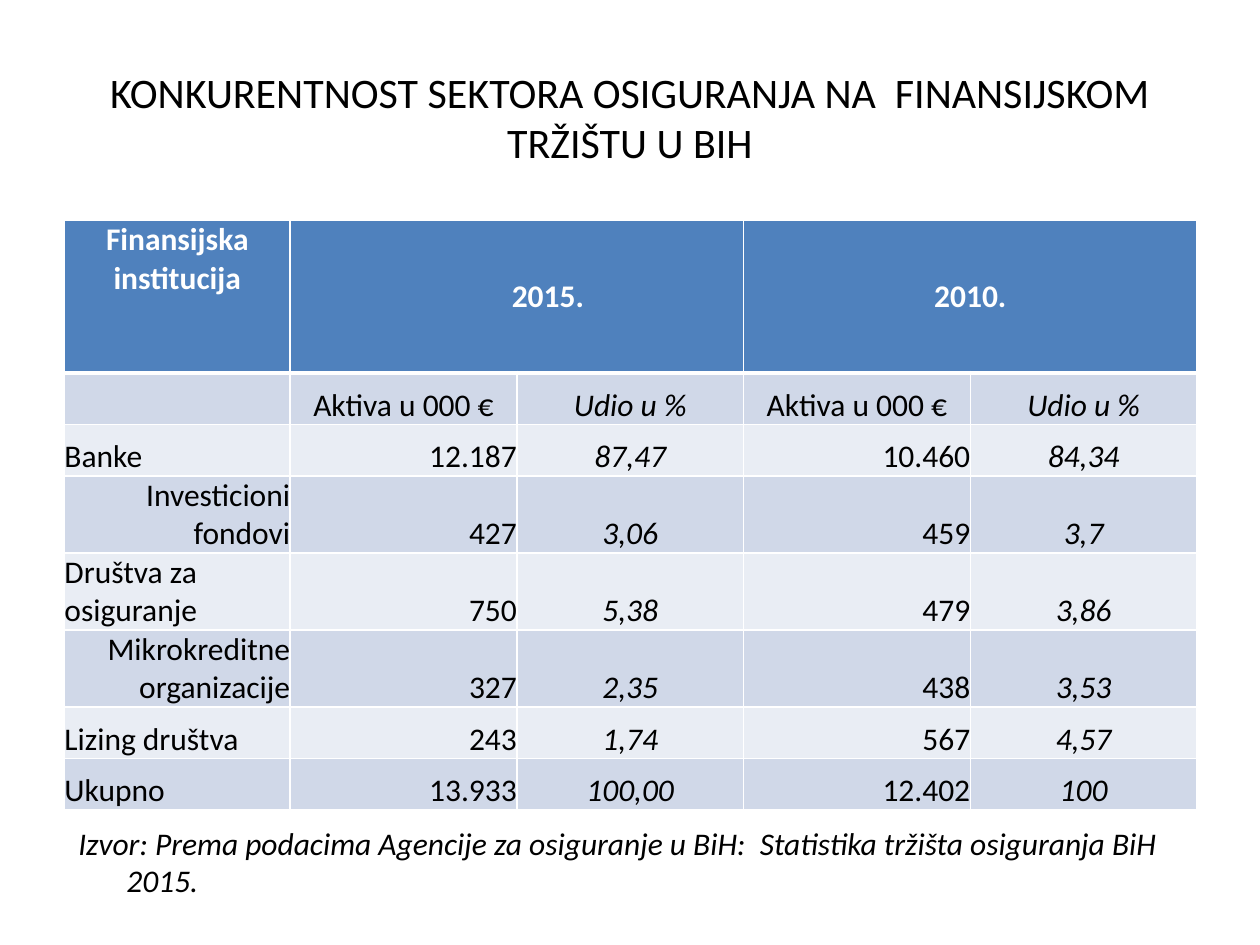
from dataclasses import dataclass

from lxml.etree import SubElement
from pptx import Presentation
from pptx.dml.color import RGBColor
from pptx.enum.text import MSO_ANCHOR as Anchor, PP_ALIGN as Align
from pptx.oxml.ns import qn
from pptx.util import Cm, Pt

COLORS = {
    "header": "4F81BD",
    "band_dark": "D0D8E8",
    "band_light": "E9EDF4",
    "white": "FFFFFF",
    "black": "000000",
}
FONT = "Calibri"
HEADER_HEIGHT, SINGLE_HEIGHT, DOUBLE_HEIGHT = 3.07, 1.04, 1.55
COLUMN_WIDTHS = (4.55, 4.57, 4.57, 4.57, 4.57)


@dataclass(frozen=True)
class Institution:
    name: str
    figures: tuple
    name_align: Align = Align.LEFT
    height: float = SINGLE_HEIGHT


@dataclass(frozen=True)
class CellStyle:
    fill: str
    align: Align
    color: str = "black"
    anchor: Anchor = Anchor.BOTTOM
    bold: bool = False
    italic: bool = False
    left_margin: float = 0
    bottom_border: float = 1


INSTITUTIONS = (
    Institution("Banke", ("12.187", "87,47", "10.460", "84,34")),
    Institution("Investicioni fondovi", ("427", "3,06", "459", "3,7"), Align.RIGHT, DOUBLE_HEIGHT),
    Institution("Društva za osiguranje", ("750", "5,38", "479", "3,86"), Align.LEFT, DOUBLE_HEIGHT),
    Institution("Mikrokreditne organizacije", ("327", "2,35", "438", "3,53"), Align.RIGHT, DOUBLE_HEIGHT),
    Institution("Lizing društva", ("243", "1,74", "567", "4,57")),
    Institution("Ukupno", ("13.933", "100,00", "12.402", "100")),
)


def rgb(name: str) -> RGBColor:
    return RGBColor.from_string(COLORS[name])


def format_text(paragraph, size: float, color: str, bold: bool = False, italic: bool = False) -> None:
    for font in [paragraph.font] + [run.font for run in paragraph.runs]:
        font.name = FONT
        font.size = Pt(size)
        font.bold = bold
        font.italic = italic
        font.color.rgb = rgb(color)


def add_borders(cell, bottom: float) -> None:
    properties = cell._tc.get_or_add_tcPr()
    for side, width in (("L", 1), ("R", 1), ("T", 1), ("B", bottom)):
        line = SubElement(properties, qn(f"a:ln{side}"), w=str(Pt(width)))
        fill = SubElement(line, qn("a:solidFill"))
        SubElement(fill, qn("a:srgbClr"), val=COLORS["white"])


def fill_cell(cell, text: str, style: CellStyle) -> None:
    add_borders(cell, style.bottom_border)
    cell.fill.solid()
    cell.fill.fore_color.rgb = rgb(style.fill)
    cell.margin_left = Cm(style.left_margin)
    cell.margin_right = cell.margin_top = cell.margin_bottom = 0
    cell.vertical_anchor = style.anchor
    cell.text_frame.text = text
    paragraph = cell.text_frame.paragraphs[0]
    paragraph.alignment = style.align
    format_text(paragraph, 18, style.color, style.bold, style.italic)


def header_style(anchor: Anchor = Anchor.MIDDLE, left_margin: float = 0) -> CellStyle:
    return CellStyle("header", Align.CENTER, "white", anchor, True,
                     left_margin=left_margin, bottom_border=3)


def add_market_table(slide) -> None:
    heights = [HEADER_HEIGHT, SINGLE_HEIGHT] + [item.height for item in INSTITUTIONS]
    market = slide.shapes.add_table(
        len(heights), len(COLUMN_WIDTHS), Cm(1.3), Cm(4.45),
        Cm(sum(COLUMN_WIDTHS)), Cm(sum(heights))).table
    market.horz_banding = False
    for column, width in zip(market.columns, COLUMN_WIDTHS):
        column.width = Cm(width)
    for row, height in zip(market.rows, heights):
        row.height = Cm(height)

    years = ("Finansijska institucija", "2015.", "", "2010.", "")
    year_styles = (header_style(Anchor.TOP), header_style(left_margin=1.25)) + (header_style(),) * 3
    for column, (year, style) in enumerate(zip(years, year_styles)):
        fill_cell(market.cell(0, column), year, style)
    for column in (1, 3):
        market.cell(0, column).merge(market.cell(0, column + 1))

    measures = ("",) + ("Aktiva u 000 €", "Udio u %") * 2
    for column, measure in enumerate(measures):
        is_share = column in (2, 4)
        fill_cell(market.cell(1, column), measure,
                  CellStyle("band_dark", Align.CENTER, italic=is_share))

    for row, institution in enumerate(INSTITUTIONS, start=2):
        band = "band_light" if row % 2 == 0 else "band_dark"
        aligns = (institution.name_align,) + (Align.RIGHT, Align.CENTER) * 2
        for column, text in enumerate((institution.name,) + institution.figures):
            fill_cell(market.cell(row, column), text,
                      CellStyle(band, aligns[column], italic=column in (2, 4)))


def add_text(slide, text: str, top: float, height: float, size: float,
             align: Align, anchor: Anchor, italic: bool = False):
    frame = slide.shapes.add_textbox(Cm(1.3), Cm(top), Cm(22.8), Cm(height)).text_frame
    frame.word_wrap = True
    frame.vertical_anchor = anchor
    frame.text = text
    paragraph = frame.paragraphs[0]
    paragraph.alignment = align
    format_text(paragraph, size, "black", italic=italic)
    return paragraph


def main() -> None:
    presentation = Presentation()
    presentation.slide_width, presentation.slide_height = Cm(25.4), Cm(19.05)
    slide = presentation.slides.add_slide(presentation.slide_layouts[6])
    add_text(slide, "KONKURENTNOST SEKTORA OSIGURANJA NA  FINANSIJSKOM TRŽIŠTU U BIH",
             0.76, 3.18, 24, Align.CENTER, Anchor.MIDDLE)
    add_market_table(slide)
    citation = add_text(
        slide, "Izvor: Prema podacima Agencije za osiguranje u BiH:  Statistika tržišta osiguranja BiH 2015.",
        16.48, 1.8, 18, Align.LEFT, Anchor.TOP, italic=True)
    indent = citation._p.get_or_add_pPr()
    indent.set("marL", str(Cm(1)))
    indent.set("indent", str(Cm(-0.97)))
    presentation.save("out.pptx")


if __name__ == "__main__":
    main()
